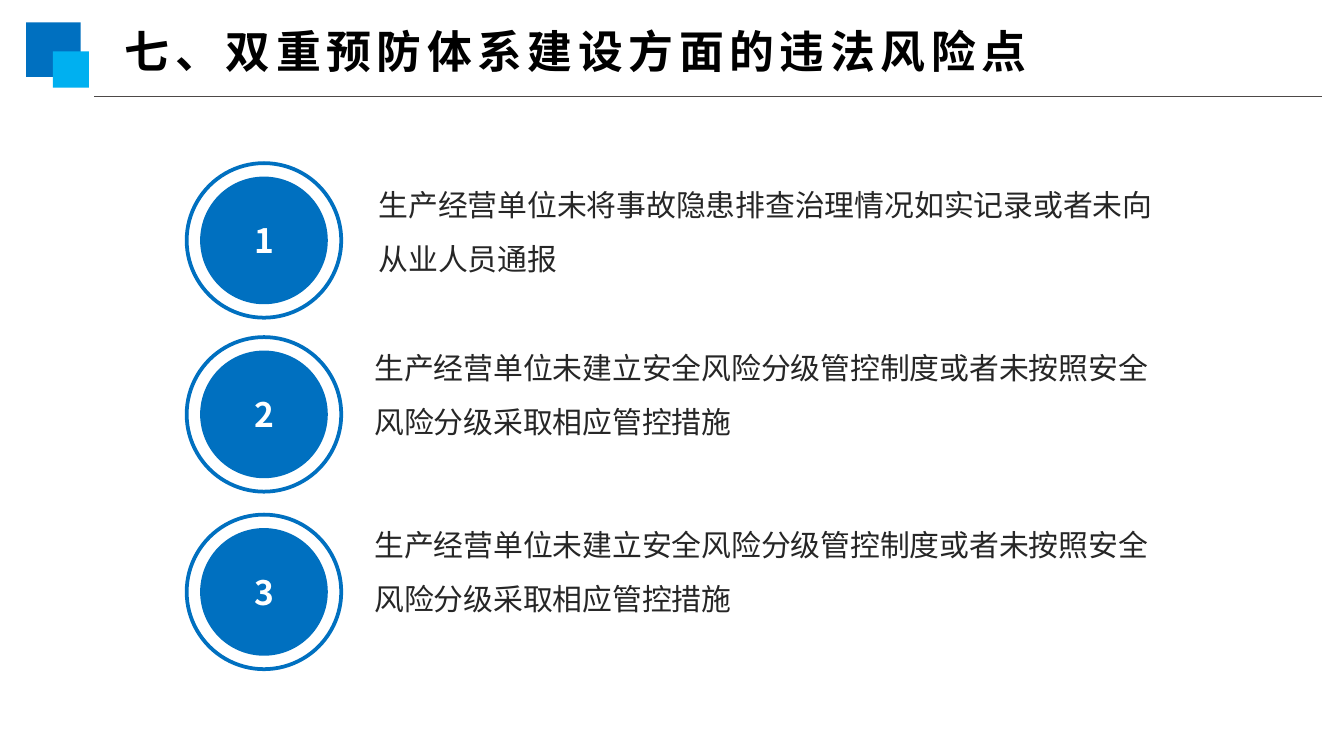
"""Build a slide listing three numbered legal risk points."""
from lxml import etree
from pptx import Presentation
from pptx.dml.color import RGBColor
from pptx.enum import shapes, text
from pptx.oxml import ns
from pptx.util import Pt

TITLE = "七、双重预防体系建设方面的违法风险点"
RISKS = [
    ("生产经营单位未将事故隐患排查治理情况如实记录或者未向从业人员通报", 195.8, 87.1, 87.4),
    ("生产经营单位未建立安全风险分级管控制度或者未按照安全风险分级采取相应管控措施", 193.4, 174.2, 180.6),
    ("生产经营单位未建立安全风险分级管控制度或者未按照安全风险分级采取相应管控措施", 193.4, 269.3, 275.7),
]

FONT = "Noto Sans CJK SC"
BLUE = RGBColor(0x00, 0x70, 0xC0)
SKY = RGBColor(0x00, 0xB0, 0xF0)
RULE = RGBColor(0x4D, 0x49, 0x48)
BLACK = RGBColor(0, 0, 0)
INK = RGBColor(0x26, 0x26, 0x26)
WHITE = RGBColor(0xFF, 0xFF, 0xFF)

SQUARES = [(14, 12, 29.2, BLUE), (28.3, 27.6, 19.4, SKY)]
RING_LEFT, RING_SIZE, DISC_SIZE = 100, 82.8, 68.4
TEXT_WIDTH, TEXT_HEIGHT = 438.5, 65.5


def write(frame, words, *, size, color, bold=False, spacing=None, line=None, align=None):
    para = frame.paragraphs[0]
    para.alignment = align
    para.line_spacing = line
    span = para.add_run()
    span.text = words
    font = span.font
    font.size, font.bold, font.name = Pt(size), bold, FONT
    font.color.rgb = color
    props = para.runs[0].font._element
    etree.SubElement(props, ns.qn("a:ea"), typeface=FONT)
    if spacing:
        props.set("spc", str(spacing * 100))


def add_figure(parent, kind, left, top, size, fill=None):
    figure = parent.add_shape(kind, Pt(left), Pt(top), Pt(size), Pt(size))
    figure.shadow.inherit = False
    if fill is None:
        figure.fill.background()
        figure.line.color.rgb = BLUE
        figure.line.width = Pt(2)
    else:
        figure.fill.solid()
        figure.fill.fore_color.rgb = fill
        figure.line.fill.background()
    return figure


def add_text(page, words, left, top, width, **style):
    box = page.shapes.add_textbox(Pt(left), Pt(top), Pt(width), Pt(TEXT_HEIGHT))
    box.text_frame.word_wrap = True
    write(box.text_frame, words, **style)


def add_badge(page, number, top):
    group = page.shapes.add_group_shape().shapes
    inset = (RING_SIZE - DISC_SIZE) / 2
    oval = shapes.MSO_SHAPE.OVAL
    disc = add_figure(group, oval, RING_LEFT + inset, top + inset, DISC_SIZE, BLUE)
    disc.text_frame.vertical_anchor = text.MSO_ANCHOR.MIDDLE
    write(disc.text_frame, str(number), size=18, color=WHITE, bold=True,
          align=text.PP_ALIGN.CENTER)
    add_figure(group, oval, RING_LEFT, top, RING_SIZE)


def main():
    deck = Presentation()
    deck.slide_width, deck.slide_height = Pt(720), Pt(405)
    page = deck.slides.add_slide(deck.slide_layouts[6])

    for left, top, size, fill in SQUARES:
        add_figure(page.shapes, shapes.MSO_SHAPE.RECTANGLE, left, top, size, fill)
    rule = page.shapes.add_connector(
        shapes.MSO_CONNECTOR.STRAIGHT, Pt(708), Pt(51.6), Pt(50.4), Pt(51.6))
    rule.line.color.rgb = RULE
    rule.line.width = Pt(0.75)
    etree.SubElement(rule._element.spPr, ns.qn("a:effectLst"))

    add_text(page, TITLE, 59.8, 9.4, 519, size=24, color=BLACK, bold=True, spacing=3)
    for number, (words, left, top, ring_top) in enumerate(RISKS, 1):
        add_text(page, words, left, top, TEXT_WIDTH, size=16, color=INK, line=1.5)
        add_badge(page, number, ring_top)

    deck.save("out.pptx")


if __name__ == "__main__":
    main()
